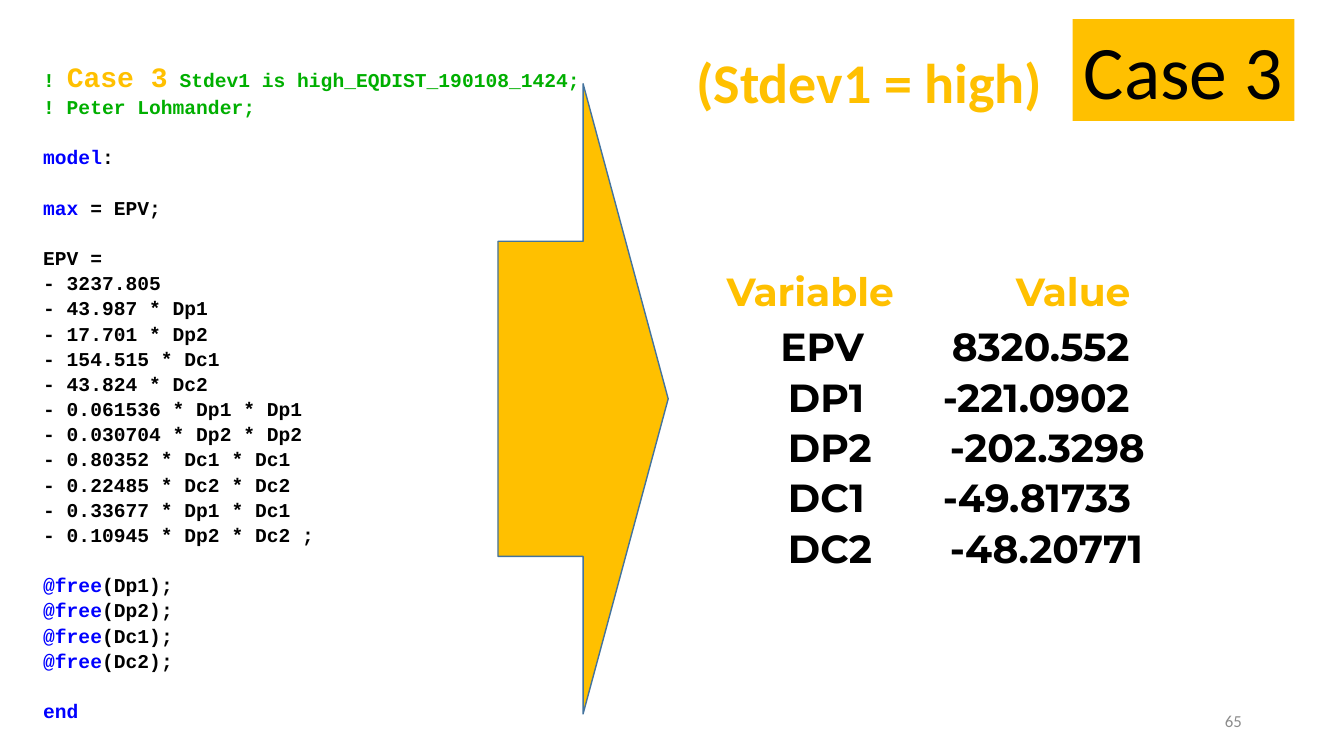
from dataclasses import dataclass
from typing import Optional

from lxml import etree
from pptx import Presentation
from pptx.dml.color import RGBColor
from pptx.enum.shapes import MSO_SHAPE
from pptx.enum.text import MSO_ANCHOR, MSO_AUTO_SIZE, PP_ALIGN
from pptx.oxml.ns import qn
from pptx.util import Cm, Pt

RIGHT_ARROW, RECTANGLE = MSO_SHAPE.RIGHT_ARROW, MSO_SHAPE.RECTANGLE
TOP, MIDDLE = MSO_ANCHOR.TOP, MSO_ANCHOR.MIDDLE
LEFT, CENTER, RIGHT = PP_ALIGN.LEFT, PP_ALIGN.CENTER, PP_ALIGN.RIGHT
NO_FIT = MSO_AUTO_SIZE.NONE

COLORS = {
    "gold": "FFC000",
    "outline": "43739E",
    "comment": "00AF00",
    "keyword": "0000FF",
    "black": "000000",
    "gray": "8C8C8C",
}
LINE_SPACING = 1.07
CODE_GAP = 18


@dataclass
class Run:
    text: str
    color: Optional[str] = None
    size: Optional[float] = None


@dataclass
class Line:
    runs: list[Run]
    font: str
    size: float
    color: str = "black"
    bold: bool = True
    align: PP_ALIGN = LEFT
    spacing: Optional[float] = None
    before: float = 0
    tab: Optional[float] = None


def rgb(name: str) -> RGBColor:
    return RGBColor.from_string(COLORS[name])


def add_tab(p, position: float) -> None:
    """Give the paragraph one left tab stop, in centimetres from the text edge."""
    tabs = etree.SubElement(p._p.get_or_add_pPr(), qn("a:tabLst"))
    etree.SubElement(tabs, qn("a:tab"), pos=str(Cm(position)), algn="l")


def fill_text(tf, lines: list[Line], wrap: bool = True, anchor=TOP) -> None:
    tf.word_wrap = wrap
    tf.auto_size = NO_FIT
    tf.vertical_anchor = anchor
    for i, line in enumerate(lines):
        p = tf.add_paragraph() if i else tf.paragraphs[0]
        p.alignment = line.align
        if line.spacing:
            p.line_spacing = line.spacing
        p.space_before = Pt(line.before)
        if line.tab:
            add_tab(p, line.tab)
        p.font.name = line.font
        p.font.size = Pt(line.size)
        p.font.bold = line.bold
        p.font.color.rgb = rgb(line.color)
        for run in line.runs:
            r = p.add_run()
            r.text = run.text
            if run.color:
                r.font.color.rgb = rgb(run.color)
            if run.size:
                r.font.size = Pt(run.size)


def add_text(s, box: tuple, lines: list[Line], anchor=TOP) -> None:
    fill_text(s.shapes.add_textbox(*map(Cm, box)).text_frame, lines, anchor=anchor)


def add_gold_shape(s, kind, box: tuple):
    sp = s.shapes.add_shape(kind, *map(Cm, box))
    sp.shadow.inherit = False
    sp.fill.solid()
    sp.fill.fore_color.rgb = rgb("gold")
    sp.line.fill.background()
    return sp


def code(text: str, keyword: str = "", gap: bool = False) -> Line:
    """One black line of code, with an optional blue keyword in front."""
    runs = [Run(keyword, "keyword")] if keyword else []
    if text:
        runs.append(Run(text))
    return Line(runs, "Courier New", 14, spacing=LINE_SPACING,
                before=CODE_GAP if gap else 0)


def comment(*runs: Run) -> Line:
    return Line(list(runs), "Courier New", 14, "comment", spacing=LINE_SPACING)


def value_row(tab: float, *runs: Run, color: str = "black") -> Line:
    return Line(list(runs), "Montserrat", 28, color, spacing=LINE_SPACING, tab=tab)


TERMS = [
    "3237.805", "43.987 * Dp1", "17.701 * Dp2", "154.515 * Dc1", "43.824 * Dc2",
    "0.061536 * Dp1 * Dp1", "0.030704 * Dp2 * Dp2", "0.80352 * Dc1 * Dc1",
    "0.22485 * Dc2 * Dc2", "0.33677 * Dp1 * Dc1", "0.10945 * Dp2 * Dc2 ;",
]
FREE_VARIABLES = ["Dp1", "Dp2", "Dc1", "Dc2"]
PROGRAM = [
    comment(Run("! "), Run("Case 3", "gold", 20),
            Run(" Stdev1 is high_EQDIST_190108_1424;")),
    comment(Run("! Peter Lohmander;")),
    code(":", "model", gap=True),
    code(" = EPV;", "max", gap=True),
    code("EPV =", gap=True),
    *[code(f"- {term}") for term in TERMS],
    *[code(f"({name});", "@free", gap=i == 0) for i, name in enumerate(FREE_VARIABLES)],
    code("", "end", gap=True),
]
VALUES = [
    value_row(4.41, Run(" ", size=9), Run("EPV\t8320.552")),
    value_row(4.18, Run(" DP1\t-221.0902")),
    value_row(4.36, Run(" DP2\t-202.3298")),
    value_row(4.18, Run(" DC1\t-49.81733")),
    value_row(4.36, Run(" DC2\t-48.20771")),
]


def main() -> None:
    prs = Presentation()
    prs.slide_width, prs.slide_height = Cm(33.87), Cm(19.05)
    s = prs.slides.add_slide(prs.slide_layouts[5])

    title = s.shapes.title
    title.left, title.top, title.width, title.height = map(Cm, (17.25, 1.07, 9.32, 1.96))
    fill_text(title.text_frame,
              [Line([Run("(Stdev1 = high)")], "Calibri", 40, "gold", align=CENTER)],
              wrap=False)

    add_text(s, (18.06, 6.53, 15.32, 2.82),
             [value_row(7.29, Run("Variable\tValue"), color="gold")])

    arrow = add_gold_shape(s, RIGHT_ARROW, (12.55, 2.11, 4.29, 15.88))
    arrow.line.color.rgb = rgb("outline")
    arrow.line.width = Pt(1)

    badge = add_gold_shape(s, RECTANGLE, (27.03, 0.48, 5.59, 2.57))
    fill_text(badge.text_frame,
              [Line([Run("Case 3")], "Calibri", 54, bold=False, align=CENTER)],
              wrap=False)

    add_text(s, (0.84, 1.32, 16.94, 17.17), PROGRAM)
    add_text(s, (19.33, 7.92, 11.79, 6.6), VALUES)
    add_text(s, (23.93, 17.65, 7.62, 1.02),
             [Line([Run("65")], "Calibri", 12, "gray", bold=False, align=RIGHT)],
             anchor=MIDDLE)

    prs.save("out.pptx")


if __name__ == "__main__":
    main()
